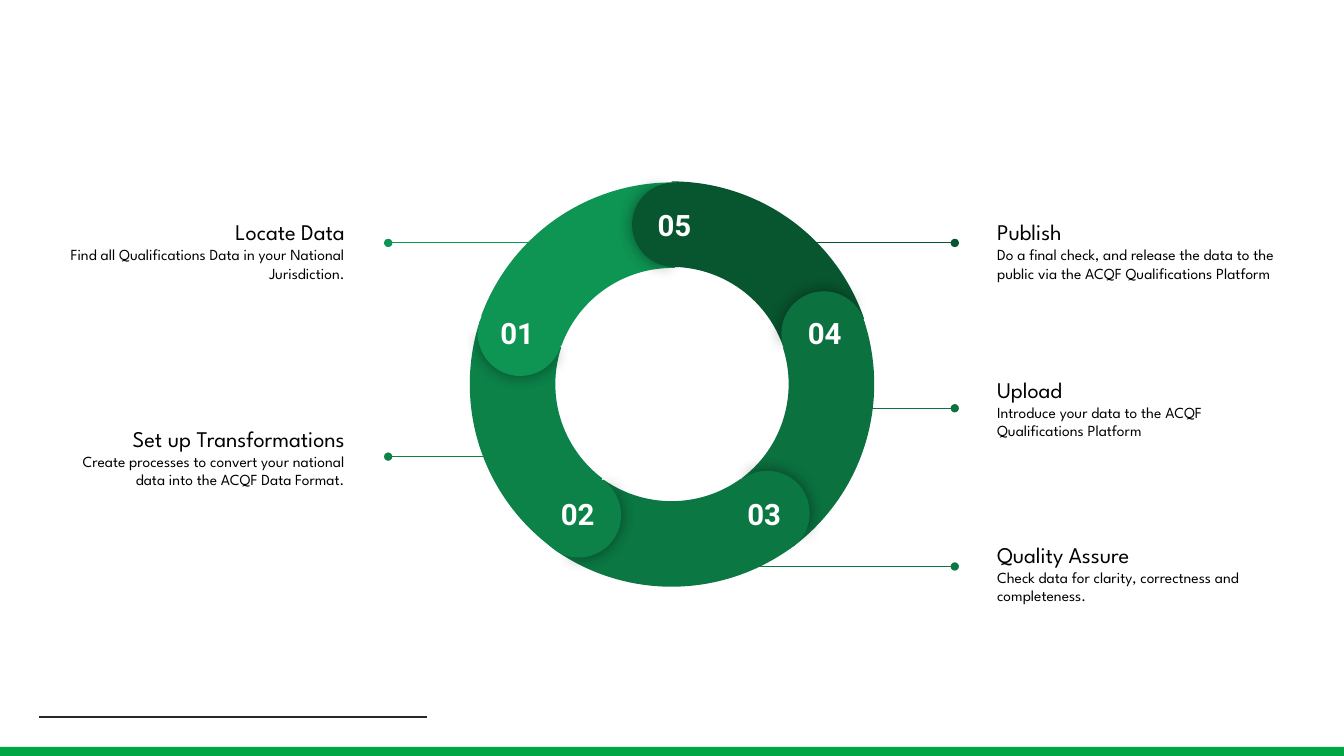
import pptx
import pptx.util
import pptx.dml.color
import pptx.enum.shapes
import pptx.enum.text
import pptx.oxml
import pptx.oxml.ns

COLS, ROWS = 1333, 750
CELL = pptx.util.Inches(0.01)

COLORS = {
    "01": "0E9453", "02": "0C8148", "03": "0B7743", "04": "0B713F", "05": "085630",
    "bar": "00A643", "rule": "24282A", "text": "000000", "number": "FFFFFF", "shadow": "000000",
}
STEPS = [
    ("01", "left", "Locate Data",
     "Find all Qualifications Data in your National Jurisdiction.", 181, 564, 241),
    ("02", "left", "Set up Transformations",
     "Create processes to convert your national data into the ACQF Data Format.", 386, 521, 453),
    ("03", "right", "Quality Assure",
     "Check data for clarity, correctness and completeness.", 501, 679, 562),
    ("04", "right", "Upload",
     "Introduce your data to the ACQF Qualifications Platform", 337, 818, 405),
    ("05", "right", "Publish",
     "Do a final check, and release the data to the public via the ACQF Qualifications Platform",
     181, 760, 241),
]
SIDES = {
    "left": {"text": 45, "dot": 385, "align": pptx.enum.text.PP_ALIGN.RIGHT},
    "right": {"text": 976, "dot": 947, "align": pptx.enum.text.PP_ALIGN.LEFT},
}
ARCS = {
    "01": (465, 181, 350), "02": (466, 179, 277), "03": (464, 178, 204),
    "04": (463, 179, 132), "05": (464, 180, 60),
}
CAPS = {
    "01": (474, 289, 284.1), "02": (532, 469, 211.1), "03": (719, 467, 139.1),
    "04": (775, 289, 67.1), "05": (627, 181, 357.1),
}
NUMBERS = {"01": (476, 300), "02": (536, 479), "03": (721, 479), "04": (781, 300), "05": (632, 192)}
STACK = [
    ("arc", "02"), ("arc", "04"), ("arc", "05"), ("cap", "04"), ("arc", "03"), ("cap", "02"),
    ("arc", "01"), ("cap", "05"), ("cap", "03"), ("cap", "01"),
]
ARC_SIZE, CAP_SIZE, CAP_TURN = 404, 84, 179.3
ARC_ADJ = (126.03, 168.68, 0.21)
CAP_ADJ, COVER_ADJ = (61.9, 149.96), (40.28, 171.84)
LABEL_SIZE, NUMBER_SIZE = (310, 135), (74, 39)
INSET = 13
TITLE = {"size": pptx.util.Pt(16), "name": "League Spartan"}
BODY = {"size": pptx.util.Pt(11), "name": "League Spartan"}
NUMBER = {"size": pptx.util.Pt(21), "name": "Roboto", "bold": True}

MSO = pptx.enum.shapes.MSO_SHAPE
ANCHOR = pptx.enum.text.MSO_ANCHOR


def grid(*cells):
    return [round(c * CELL) for c in cells]


def rgb(key):
    return pptx.dml.color.RGBColor.from_string(COLORS[key])


def add_xml(parent, body):
    parent.append(pptx.oxml.parse_xml(body.replace(">", " " + pptx.oxml.ns.nsdecls("a") + ">", 1)))


def add_shape(s, kind, box, color, turn=0, adj=()):
    sp = s.shapes.add_shape(kind, *grid(*box))
    sp.shadow.inherit = False
    sp.fill.solid()
    sp.fill.fore_color.rgb = rgb(color)
    sp.line.fill.background()
    sp.rotation = turn % 360
    for i, value in enumerate(adj):
        sp.adjustments[i] = value
    return sp


def add_line(s, start, end, color, width, dot=False):
    c = s.shapes.add_connector(pptx.enum.shapes.MSO_CONNECTOR.STRAIGHT, *grid(*start, *end))
    c.line.color.rgb = rgb(color)
    c.line.width = pptx.util.Pt(width)
    if dot:
        add_xml(c.line._get_or_add_ln(), '<a:tailEnd type="oval"></a:tailEnd>')
    add_xml(c._element.spPr, "<a:effectLst></a:effectLst>")


def add_text(s, box, anchor, align, color, paragraphs):
    tf = s.shapes.add_textbox(*grid(*box)).text_frame
    frame = dict.fromkeys(("margin_left", "margin_top", "margin_right", "margin_bottom"), INSET * CELL)
    for name, value in {**frame, "word_wrap": True, "vertical_anchor": anchor}.items():
        setattr(tf, name, value)
    for i, (text, font, after) in enumerate(paragraphs):
        p = tf.add_paragraph() if i else tf.paragraphs[0]
        p.alignment = align
        p.space_after = pptx.util.Pt(after)
        r = p.add_run()
        r.text = text
        r.font.color.rgb = rgb(color)
        for name, value in font.items():
            setattr(r.font, name, value)


def add_arc(s, step):
    x, y, turn = ARCS[step]
    add_shape(s, MSO.BLOCK_ARC, (x, y, ARC_SIZE, ARC_SIZE), step, turn, ARC_ADJ)


def add_cap(s, step):
    x, y, turn = CAPS[step]
    box = (x, y, CAP_SIZE, CAP_SIZE)
    sp = add_shape(s, MSO.PIE, box, step, turn, CAP_ADJ)
    effects = sp._element.spPr.find(pptx.oxml.ns.qn("a:effectLst"))
    add_xml(effects, f'<a:outerShdw blurRad="{pptx.util.Pt(11.2)}" dist="0" dir="0" algn="ctr" '
                     f'rotWithShape="0"><a:srgbClr val="{COLORS["shadow"]}">'
                     '<a:alpha val="43000"/></a:srgbClr></a:outerShdw>')
    add_shape(s, MSO.PIE, box, step, turn + CAP_TURN, COVER_ADJ)


def main():
    prs = pptx.Presentation()
    prs.slide_width, prs.slide_height = grid(COLS, ROWS)
    s = prs.slides.add_slide(prs.slide_layouts[6])

    add_shape(s, MSO.RECTANGLE, (0, 741, COLS, ROWS - 741), "bar")
    add_line(s, (39, 711), (424, 711), "rule", 1.5)

    for step, side, title, body, top, ring_x, line_y in STEPS:
        place = SIDES[side]
        add_line(s, (ring_x, line_y), (place["dot"], line_y), step, 0.75, dot=True)
        add_text(s, (place["text"], top, *LABEL_SIZE), ANCHOR.MIDDLE, place["align"], "text",
                 [(title, TITLE, 0), (body, BODY, 21)])

    draw = {"arc": add_arc, "cap": add_cap}
    for part, step in STACK:
        draw[part](s, step)

    for step, corner in NUMBERS.items():
        add_text(s, (*corner, *NUMBER_SIZE), ANCHOR.TOP, pptx.enum.text.PP_ALIGN.CENTER, "number",
                 [(step, NUMBER, 0)])

    prs.save("out.pptx")


if __name__ == "__main__":
    main()
